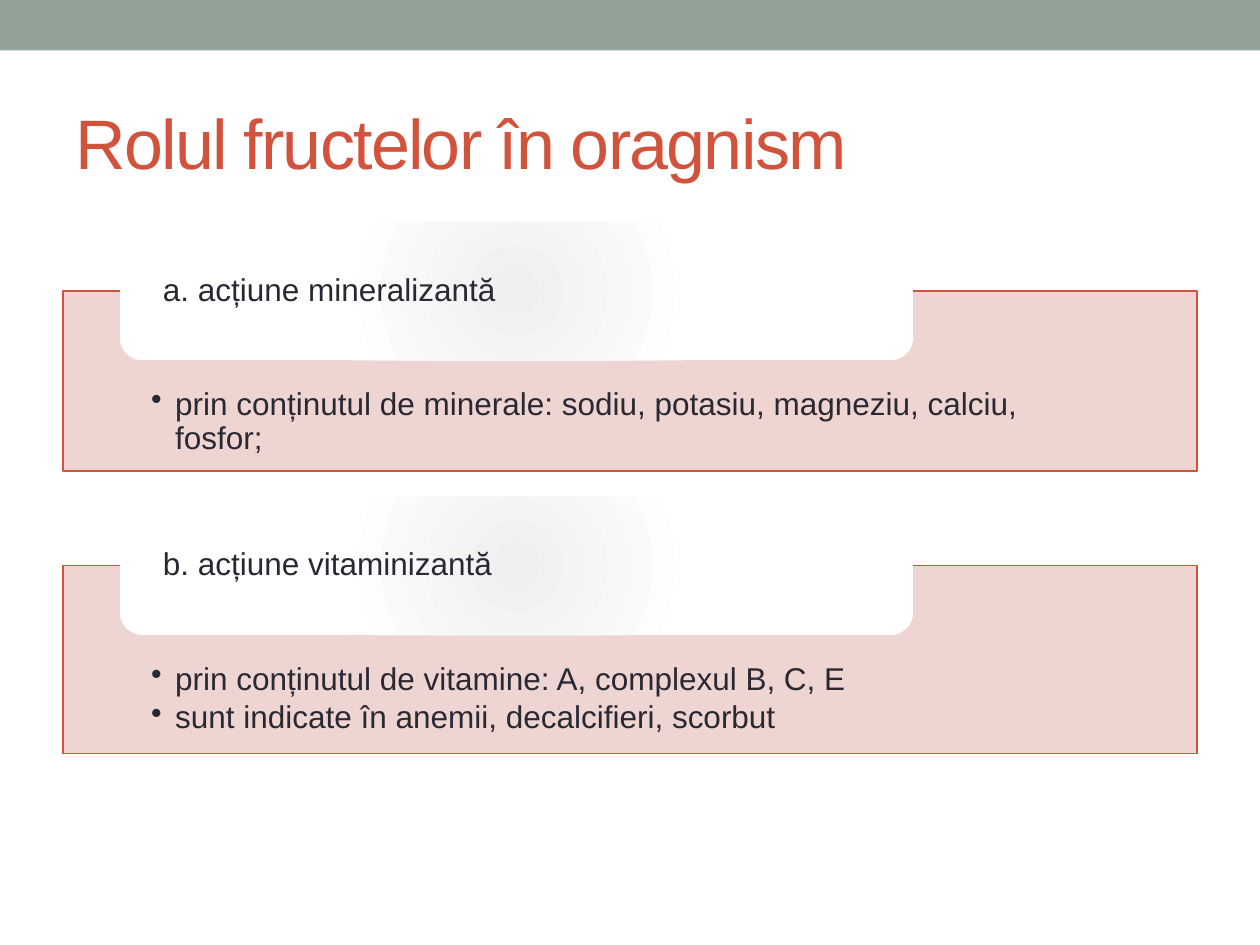
from dataclasses import dataclass

from lxml import etree
from pptx import Presentation
from pptx.dml.color import RGBColor
from pptx.enum.shapes import MSO_SHAPE
from pptx.enum.text import MSO_ANCHOR, PP_ALIGN
from pptx.oxml.ns import qn
from pptx.util import Inches, Pt

RECT = MSO_SHAPE.RECTANGLE
ROUND = MSO_SHAPE.ROUNDED_RECTANGLE
MIDDLE = MSO_ANCHOR.MIDDLE
TOP = MSO_ANCHOR.TOP
LEFT = PP_ALIGN.LEFT


@dataclass(frozen=True)
class Theme:
    font: str = "Arial"
    band: str = "93A299"
    accent: str = "D2533C"
    panel: str = "EED1CE"
    glow: str = "EFEFEF"
    white: str = "FFFFFF"
    ink: str = "292934"
    title: int = 40
    body: int = 18


def add(parent, tag, **attrs):
    return etree.SubElement(parent, qn(tag), attrs)


class Deck:
    def __init__(self, theme, slide):
        self.theme = theme
        self.slide = slide

    def shape(self, kind, box):
        shape = self.slide.shapes.add_shape(kind, *map(Inches, box))
        shape.shadow.inherit = False
        return shape

    def paint(self, shape, color):
        shape.fill.solid()
        shape.fill.fore_color.rgb = RGBColor.from_string(color)

    def label(self, shape, lines, size, color, insets, anchor, bullet=False):
        frame = shape.text_frame
        frame.word_wrap = True
        frame.vertical_anchor = anchor
        (frame.margin_left, frame.margin_top,
         frame.margin_right, frame.margin_bottom) = map(Inches, insets)
        frame.text = "\n".join(lines)
        for para in frame.paragraphs:
            para.alignment = LEFT
            if bullet:
                props = para._p.get_or_add_pPr()
                props.set("marL", str(Inches(0.19)))
                props.set("indent", str(-Inches(0.19)))
                add(props, "a:buChar", char="•")
                para.space_after = Pt(2.7)
            para.line_spacing = 0.9 if size == self.theme.body else 1.0
            para.font.name = self.theme.font
            para.font.size = Pt(size)
            para.font.color.rgb = RGBColor.from_string(color)

    def band(self, box):
        shape = self.shape(RECT, box)
        self.paint(shape, self.theme.band)
        shape.line.fill.background()

    def title(self, text, box):
        shape = self.slide.shapes.add_textbox(*map(Inches, box))
        self.label(shape, [text], self.theme.title, self.theme.accent,
                   (0.1, 0.05, 0.1, 0.05), MIDDLE)
        # Tighten the letters by one point
        para = shape.text_frame.paragraphs[0]
        para._p.pPr.find(qn("a:defRPr")).set("spc", "-100")

    def panel(self, lines, box):
        shape = self.shape(RECT, box)
        self.paint(shape, self.theme.panel)
        color = shape._element.spPr.find(qn("a:solidFill"))[0]
        add(color, "a:alpha", val="90000")
        shape.line.color.rgb = RGBColor.from_string(self.theme.accent)
        shape.line.width = Pt(0.75)
        self.label(shape, lines, self.theme.body, self.theme.ink,
                   (0.7, 0.77, 0.7, 0.14), TOP, bullet=True)

    def tab(self, text, box):
        shape = self.shape(ROUND, box)
        self.glow(shape)
        shape.line.fill.background()
        self.label(shape, [text], self.theme.body, self.theme.ink,
                   (0.29, 0, 0.29, 0), MIDDLE)

    def glow(self, shape):
        """Fill with a round gradient spreading from the centre."""
        grad = etree.Element(qn("a:gradFill"), rotWithShape="1")
        shape._element.spPr.find(qn("a:prstGeom")).addnext(grad)
        stops = add(grad, "a:gsLst")
        for pos, color in ((0, self.theme.glow), (45, self.theme.white),
                           (100, self.theme.white)):
            stop = add(stops, "a:gs", pos=str(pos * 1000))
            add(stop, "a:srgbClr", val=color)
        sweep = add(grad, "a:path", path="circle")
        add(sweep, "a:fillToRect", **dict.fromkeys("ltrb", "50000"))


def main():
    show = Presentation()
    show.slide_width, show.slide_height = Inches(10), Inches(7.5)
    deck = Deck(Theme(), show.slides.add_slide(show.slide_layouts[6]))

    # Header
    deck.band((0, 0, 10, 0.4))
    deck.title("Rolul fructelor în oragnism", (0.5, 0.58, 9, 1.08))

    # Each panel carries a tab across its top edge
    roles = [
        (2.31, 1.43, "a. acțiune mineralizantă",
         ["prin conținutul de minerale: sodiu, potasiu, magneziu, calciu, "
          "fosfor;"]),
        (4.49, 1.49, "b. acțiune vitaminizantă",
         ["prin conținutul de vitamine: A, complexul B, C, E",
          "sunt indicate în anemii, decalcifieri, scorbut"]),
    ]
    tall = 1.1
    for top, height, head, lines in roles:
        deck.panel(lines, (0.5, top, 9, height))
        deck.tab(head, (0.95, top - tall / 2, 6.3, tall))

    show.save("out.pptx")


if __name__ == "__main__":
    main()
